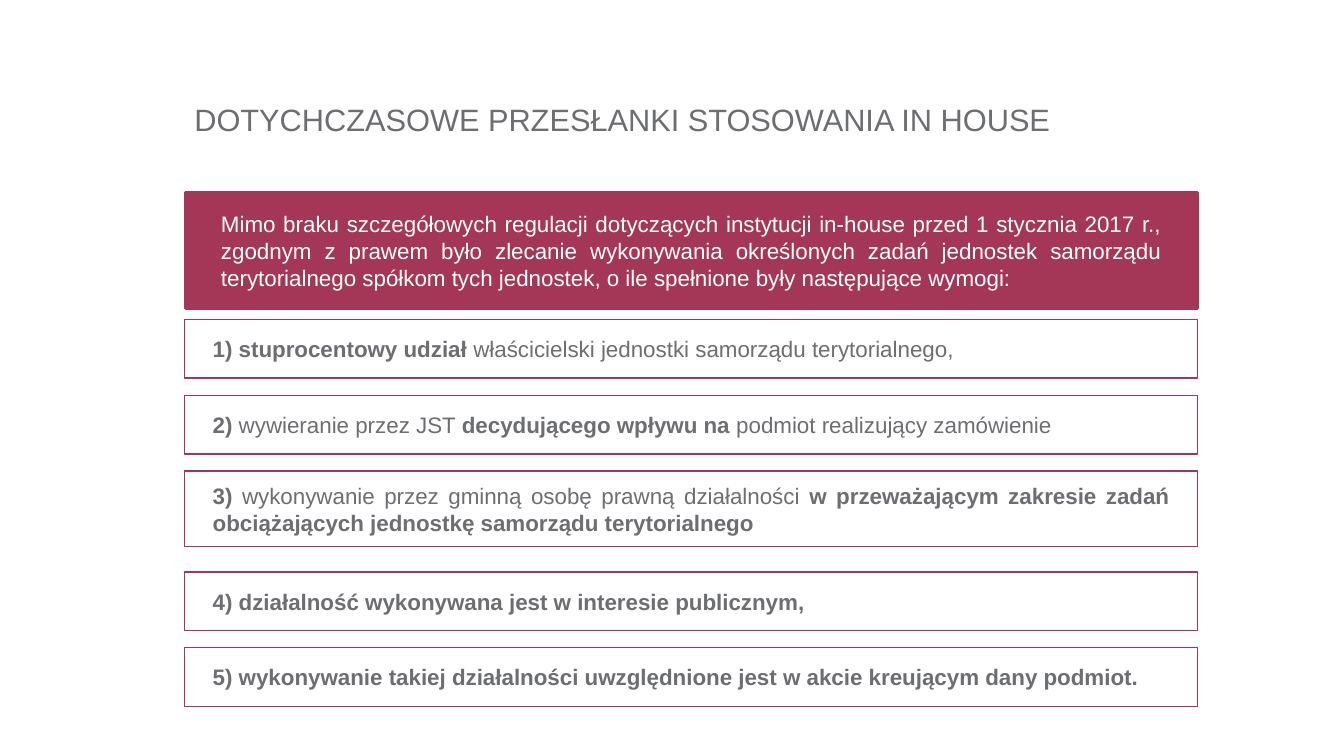
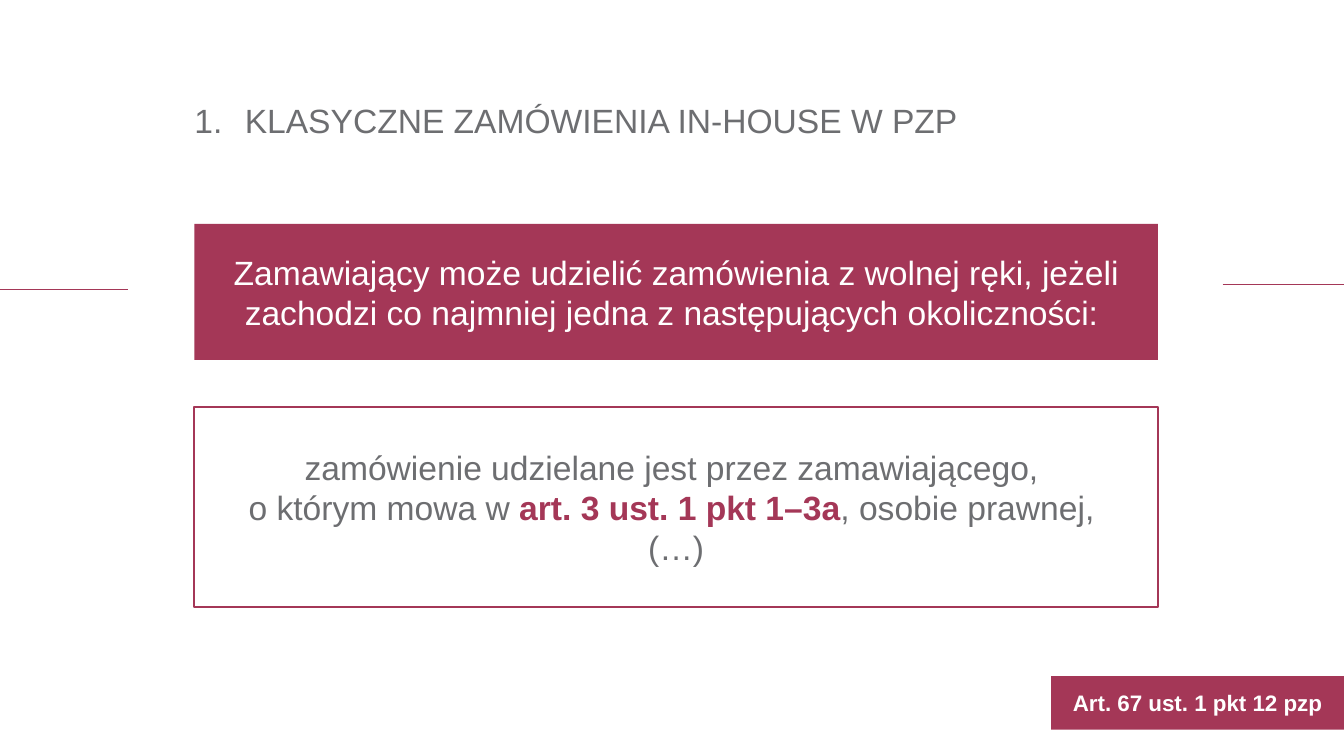
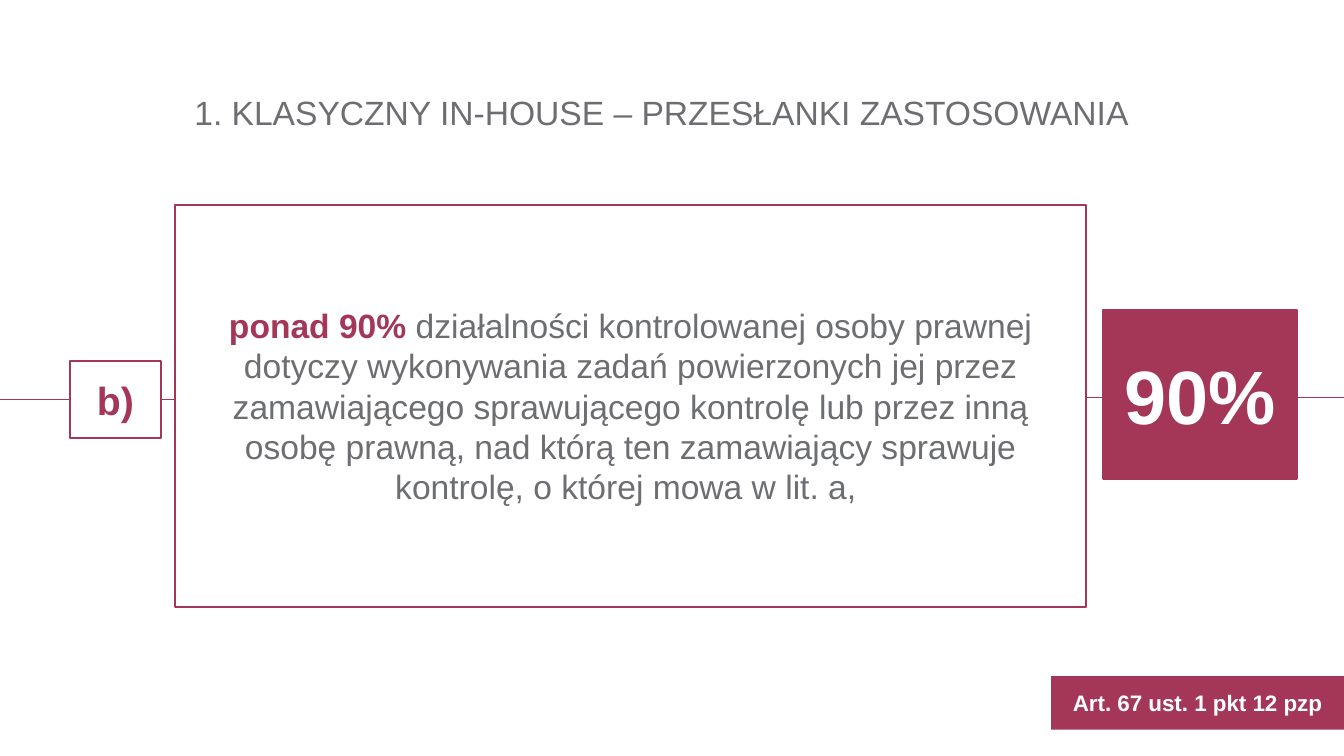
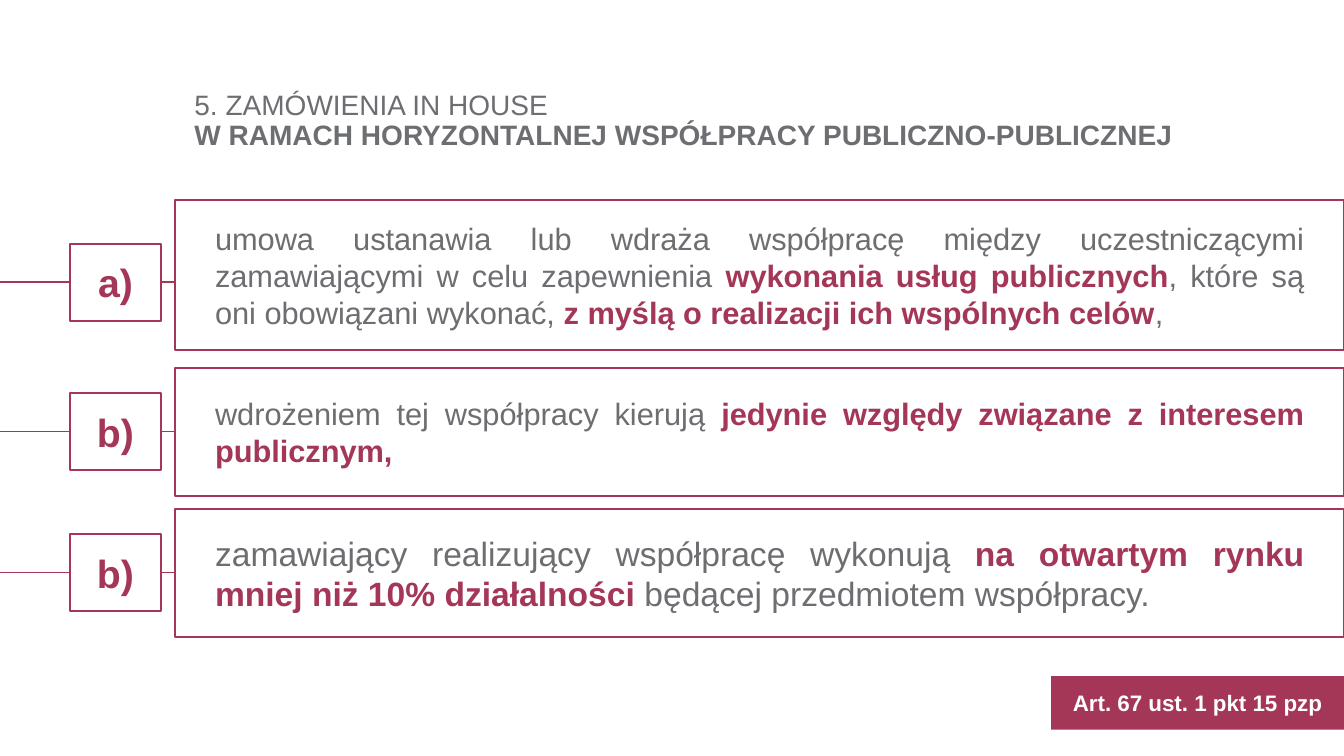
from dataclasses import dataclass

from lxml import etree
from pptx import Presentation
from pptx.dml.color import RGBColor
from pptx.enum import shapes, text
from pptx.oxml import ns
from pptx.util import Cm, Pt


@dataclass(frozen=True)
class Theme:
    font: str = "Arial"
    wine: RGBColor = RGBColor(0xA4, 0x37, 0x57)
    grey: RGBColor = RGBColor(0x6D, 0x6E, 0x71)
    white: RGBColor = RGBColor(0xFF, 0xFF, 0xFF)
    small: int = 16
    medium: int = 22
    large: int = 24
    tag: int = 28
    figure: int = 54


THEME = Theme()
WIDTH, HEIGHT = 33.87, 19.05
TITLE_LEFT = 4.65
BOX_LEFT = 4.42
CENTER, JUSTIFY, LEFT = text.PP_ALIGN.CENTER, text.PP_ALIGN.JUSTIFY, text.PP_ALIGN.LEFT

# Run styles: (colour, bold)
PLAIN = (THEME.grey, False)
BOLD = (THEME.grey, True)
ACCENT = (THEME.wine, True)
LIGHT = (THEME.white, False)
LIGHT_BOLD = (THEME.white, True)

# Content: a paragraph is a list of (words, style) runs
PREMISES_TITLE = [[("DOTYCHCZASOWE PRZESŁANKI STOSOWANIA IN HOUSE", PLAIN)]]
PREMISES_INTRO = [[(
    "Mimo braku szczegółowych regulacji dotyczących instytucji in-house przed 1 stycznia 2017 r., "
    "zgodnym z prawem było zlecanie wykonywania określonych zadań jednostek samorządu "
    "terytorialnego spółkom tych jednostek, o ile spełnione były następujące wymogi:", LIGHT)]]
# (height, gap below, runs)
PREMISES = [
    (1.48, 0.43, [("1) stuprocentowy udział ", BOLD),
                  ("właścicielski jednostki samorządu terytorialnego, ", PLAIN)]),
    (1.48, 0.43, [("2) ", BOLD), ("wywieranie przez JST ", PLAIN),
                  ("decydującego wpływu na ", BOLD),
                  ("podmiot realizujący zamówienie", PLAIN)]),
    (1.91, 0.63, [("3) ", BOLD),
                  ("wykonywanie przez gminną osobę prawną działalności ", PLAIN),
                  ("w przeważającym zakresie zadań obciążających jednostkę "
                   "samorządu terytorialnego", BOLD)]),
    (1.48, 0.43, [("4) działalność wykonywana jest w interesie publicznym,", BOLD)]),
    (1.48, 0.43, [("5) wykonywanie takiej działalności uwzględnione jest w akcie "
                   "kreującym dany podmiot. ", BOLD)]),
]

CLASSIC_TITLE = [[("KLASYCZNE ZAMÓWIENIA IN-HOUSE W PZP", PLAIN)]]
CLASSIC_INTRO = [[("Zamawiający może udzielić zamówienia z wolnej ręki, jeżeli zachodzi "
                   "co najmniej jedna z następujących okoliczności: ", LIGHT)]]
CLASSIC_CASE = [
    [("zamówienie udzielane jest przez zamawiającego, ", PLAIN)],
    [("o którym mowa w ", PLAIN), ("art. 3 ust. 1 pkt 1–3a", ACCENT),
     (", osobie prawnej, ", PLAIN)],
    [("(…)", PLAIN)],
]

SHARE_TITLE = [[("1. KLASYCZNY IN-HOUSE – PRZESŁANKI ZASTOSOWANIA", PLAIN)]]
SHARE_CASE = [[("ponad 90% ", ACCENT),
               ("działalności kontrolowanej osoby prawnej dotyczy wykonywania zadań "
                "powierzonych jej przez zamawiającego sprawującego kontrolę lub przez inną "
                "osobę prawną, nad którą ten zamawiający sprawuje kontrolę, o której mowa "
                "w lit. a, ", PLAIN)]]

COOPERATION_TITLE = [
    [("5. ZAMÓWIENIA IN HOUSE", PLAIN)],
    [("W RAMACH HORYZONTALNEJ WSPÓŁPRACY PUBLICZNO-PUBLICZNEJ", BOLD)],
]
# (letter, top, height, rail position, text size, runs)
COOPERATION = [
    ("a)", 5.05, 3.78, 7.11, THEME.medium,
     [("umowa ustanawia lub wdraża współpracę między uczestniczącymi zamawiającymi "
       "w celu zapewnienia ", PLAIN), ("wykonania usług publicznych", ACCENT),
      (", które są oni obowiązani wykonać, ", PLAIN),
      ("z myślą o realizacji ich wspólnych celów", ACCENT), (",", PLAIN)]),
    ("b)", 9.27, 3.23, 10.88, THEME.medium,
     [("wdrożeniem tej współpracy kierują ", PLAIN),
      ("jedynie względy związane z interesem publicznym,", ACCENT)]),
    ("b)", 12.83, 3.23, 14.43, THEME.large,
     [("zamawiający realizujący współpracę wykonują ", PLAIN),
      ("na otwartym rynku mniej niż 10% działalności ", ACCENT),
      ("będącej przedmiotem współpracy.", PLAIN)]),
]


# Shared parts
def write(frame, paragraphs, size, align, spacing=None, numbered=False):
    frame.word_wrap = True
    for index, runs in enumerate(paragraphs):
        para = frame.paragraphs[0] if index == 0 else frame.add_paragraph()
        if numbered:
            props = para._p.get_or_add_pPr()
            props.set("marL", str(Cm(1.27)))
            props.set("indent", str(-Cm(1.27)))
            etree.SubElement(props, ns.qn("a:buAutoNum"), type="arabicPeriod")
        para.alignment = align
        if spacing:
            para.line_spacing = spacing
        for words, (colour, bold) in runs:
            span = para.add_run()
            span.text = words
            span.font.name = THEME.font
            span.font.size = Pt(size)
            span.font.bold = bold
            span.font.color.rgb = colour


def add_title(page, top, paragraphs, size, numbered=False):
    box = page.shapes.add_textbox(Cm(TITLE_LEFT), Cm(top), Cm(WIDTH - TITLE_LEFT), Cm(1.9))
    write(box.text_frame, paragraphs, size, LEFT, 0.9, numbered)


def add_box(page, left, top, width, height, paragraphs, size, align=CENTER,
            fill=THEME.white, line=1.5, side=0.25):
    box = page.shapes.add_shape(shapes.MSO_SHAPE.RECTANGLE,
                                Cm(left), Cm(top), Cm(width), Cm(height))
    box.shadow.inherit = False
    box.fill.solid()
    box.fill.fore_color.rgb = fill
    if line:
        box.line.color.rgb = THEME.wine
        box.line.width = Pt(line)
    else:
        box.line.fill.background()
    frame = box.text_frame
    frame.vertical_anchor = text.MSO_ANCHOR.MIDDLE
    frame.margin_left = frame.margin_right = Cm(side)
    write(frame, paragraphs, size, align)


def add_rail(page, start, end, y, weight):
    rail = page.shapes.add_connector(shapes.MSO_CONNECTOR.STRAIGHT,
                                     Cm(start), Cm(y), Cm(end), Cm(y))
    rail.line.color.rgb = THEME.wine
    rail.line.width = Pt(weight)
    etree.SubElement(rail._element.spPr, ns.qn("a:effectLst"))


def add_tag(page, letter, rail):
    add_box(page, 1.76, rail - 0.97, 2.3, 1.94, [[(letter, ACCENT)]], THEME.tag)


def add_source(page, point):
    add_box(page, 26.49, 17.04, WIDTH - 26.49, 1.35,
            [[(f"Art. 67 ust. 1 pkt {point} pzp", LIGHT_BOLD)]],
            THEME.small, fill=THEME.wine, line=None)


# Slides
def premises_slide(page):
    add_title(page, 2.53, PREMISES_TITLE, THEME.medium)
    add_box(page, 4.67, 4.85, 25.5, 2.92, PREMISES_INTRO, THEME.small, JUSTIFY,
            fill=THEME.wine, line=2.25, side=0.9)
    top = 8.05
    for height, gap, runs in PREMISES:
        add_box(page, TITLE_LEFT, top, 25.53, height, [runs], THEME.small, JUSTIFY,
                line=1, side=0.71)
        top += height + gap


def classic_slide(page):
    add_title(page, 2.51, CLASSIC_TITLE, THEME.large, numbered=True)
    add_box(page, 4.9, 10.26, 24.28, 5.03, CLASSIC_CASE, THEME.large)
    add_rail(page, 0, 3.23, 7.29, 0.5)
    add_rail(page, 30.81, WIDTH, 7.16, 0.5)
    add_box(page, 4.9, 5.64, 24.28, 3.43, CLASSIC_INTRO, THEME.large,
            fill=THEME.wine, line=None)
    add_source(page, 12)


def share_slide(page):
    rail = 10.07
    add_rail(page, 0, 5.5, rail, 1)
    add_rail(page, 26.1, WIDTH, 10.01, 0.5)
    add_box(page, BOX_LEFT, 5.16, 22.94, 10.13, SHARE_CASE, THEME.large)
    add_source(page, 12)
    add_tag(page, "b)", rail)
    add_box(page, 27.79, 7.82, 4.9, 4.24, [[("90%", LIGHT_BOLD)]], THEME.figure,
            fill=THEME.wine)
    add_title(page, 2.31, SHARE_TITLE, THEME.large)


def cooperation_slide(page):
    add_title(page, 2.18, COOPERATION_TITLE, 20)
    add_source(page, 15)
    for letter, top, height, rail, size, runs in COOPERATION:
        add_rail(page, 0, 5.5, rail, 1)
        add_box(page, BOX_LEFT, top, WIDTH - BOX_LEFT, height, [runs], size, JUSTIFY, side=1)
        add_tag(page, letter, rail)


def main():
    deck = Presentation()
    deck.slide_width, deck.slide_height = Cm(WIDTH), Cm(HEIGHT)
    for build in (premises_slide, classic_slide, share_slide, cooperation_slide):
        build(deck.slides.add_slide(deck.slide_layouts[6]))
    deck.save("out.pptx")


if __name__ == "__main__":
    main()
